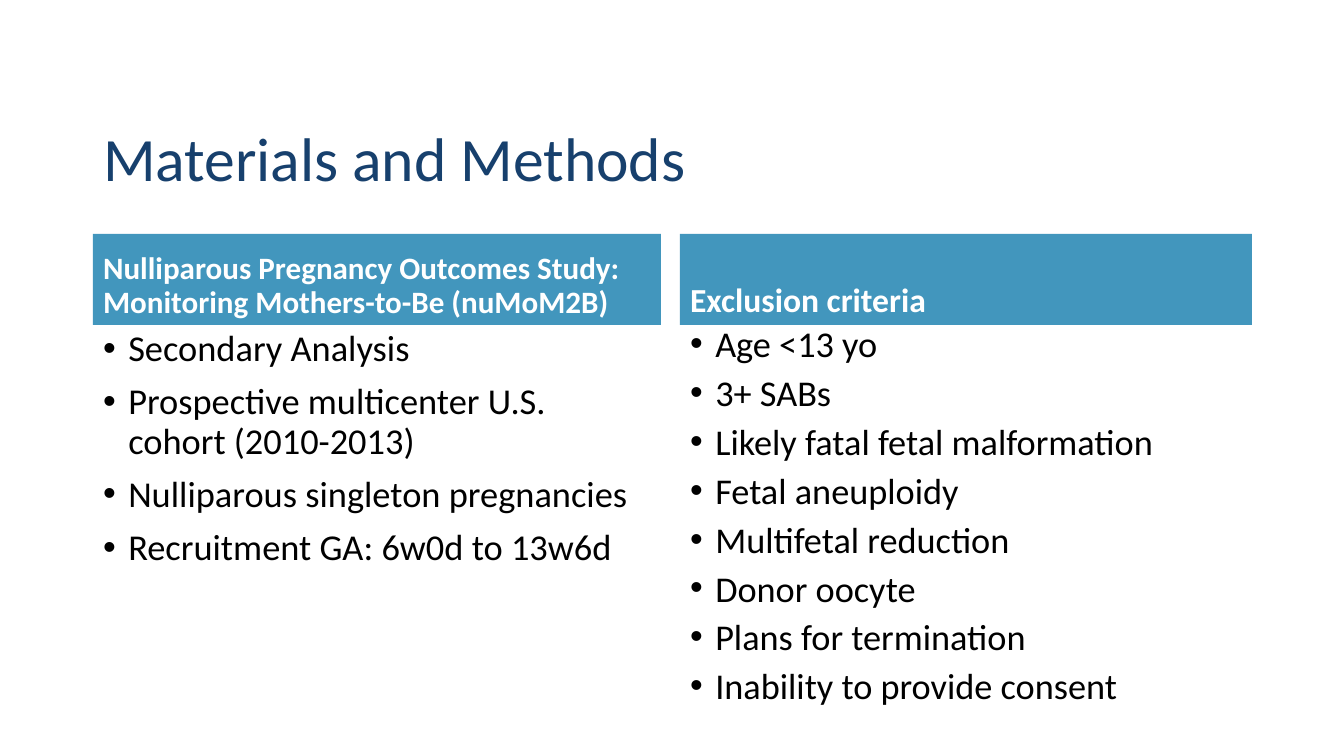
import pptx
import pptx.util
import pptx.dml.color
import pptx.enum.text
import pptx.oxml.ns
import lxml.etree

EMU_PER_PX = 914400 / 100.8
FONT = "Calibri"
COLORS = {"title": "17406D", "band": "4296BD", "heading": "FFFFFF", "body": "000000"}
COMPARISON_LAYOUT = 3 + 1
HEADING_TOP, HEADING_HEIGHT = 234, 91
LIST_TOP, LIST_HEIGHT = HEADING_TOP + HEADING_HEIGHT, 406

COLUMNS = [
    {
        "left": 93, "width": 568, "heading_size": 22.2,
        "heading": "Nulliparous Pregnancy Outcomes Study: Monitoring Mothers-to-Be (nuMoM2B)",
        "list_size": 26, "line_spacing": 0.9,
        "items": [
            "Secondary Analysis",
            "Prospective multicenter U.S. cohort (2010-2013)",
            "Nulliparous singleton pregnancies",
            "Recruitment GA: 6w0d to 13w6d",
        ],
    },
    {
        "left": 680, "width": 572, "heading_size": 24,
        "heading": "Exclusion criteria",
        "list_size": 25.9, "line_spacing": 0.8,
        "items": [
            "Age <13 yo",
            "3+ SABs",
            "Likely fatal fetal malformation",
            "Fetal aneuploidy",
            "Multifetal reduction",
            "Donor oocyte",
            "Plans for termination",
            "Inability to provide consent",
        ],
    },
]


def px(length):
    return pptx.util.Emu(round(length * EMU_PER_PX))


def rgb(name):
    return pptx.dml.color.RGBColor.from_string(COLORS[name])


def place(box, left, top, width, height, anchor):
    box.left, box.top, box.width, box.height = map(px, (left, top, width, height))
    frame = box.text_frame
    frame.auto_size = pptx.enum.text.MSO_AUTO_SIZE.NONE
    frame.word_wrap = True
    frame.vertical_anchor = anchor


def add_bullet(para):
    properties = para._p.get_or_add_pPr()
    properties.set("marL", str(pptx.util.Inches(0.25)))
    properties.set("indent", str(-pptx.util.Inches(0.25)))
    qn = pptx.oxml.ns.qn
    lxml.etree.SubElement(properties, qn("a:buFont")).set("typeface", "Arial")
    lxml.etree.SubElement(properties, qn("a:buChar")).set("char", "•")


def write(box, lines, size, color, line_spacing=0.9, bold=False, bullets=False):
    frame = box.text_frame
    frame.text = "\n".join(lines)
    for index, para in enumerate(frame.paragraphs):
        if bullets:
            add_bullet(para)
        para.alignment = pptx.enum.text.PP_ALIGN.LEFT
        para.line_spacing = line_spacing
        para.space_before = pptx.util.Pt(10 if index else 0)
        para.font.name = FONT
        para.font.size = pptx.util.Pt(size)
        para.font.bold = bold
        para.font.color.rgb = rgb(color)


def fill_title(box):
    place(box, 93, 89, 1159, 146, pptx.enum.text.MSO_ANCHOR.MIDDLE)
    write(box, ["Materials and Methods"], 44, "title")


def fill_column(heading_box, list_box, column):
    left, width = column["left"], column["width"]
    place(heading_box, left, HEADING_TOP, width, HEADING_HEIGHT,
          pptx.enum.text.MSO_ANCHOR.BOTTOM)
    heading_box.fill.solid()
    heading_box.fill.fore_color.rgb = rgb("band")
    write(heading_box, [column["heading"]], column["heading_size"], "heading", bold=True)
    place(list_box, left, LIST_TOP, width, LIST_HEIGHT, pptx.enum.text.MSO_ANCHOR.TOP)
    write(list_box, column["items"], column["list_size"], "body",
          line_spacing=column["line_spacing"], bullets=True)


def main():
    deck = pptx.Presentation()
    deck.slide_width, deck.slide_height = px(1344), px(756)
    page = deck.slides.add_slide(deck.slide_layouts[COMPARISON_LAYOUT])
    title, *bodies = page.placeholders
    fill_title(title)
    for heading_box, list_box, column in zip(bodies[::2], bodies[1::2], COLUMNS):
        fill_column(heading_box, list_box, column)
    deck.save("out.pptx")


if __name__ == "__main__":
    main()
